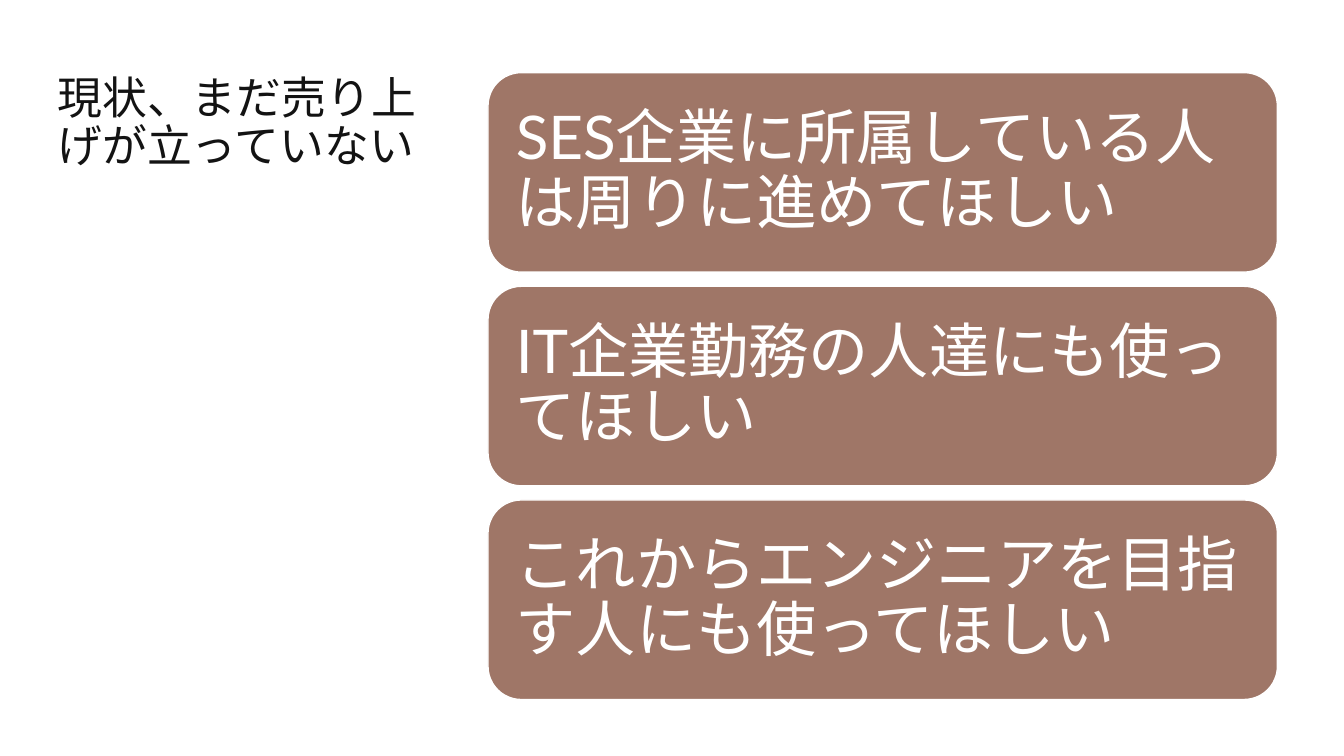
from pptx import Presentation
from pptx.dml.color import RGBColor
from pptx.enum.shapes import MSO_SHAPE
from pptx.enum.text import MSO_ANCHOR, MSO_AUTO_SIZE, PP_ALIGN
from pptx.util import Inches, Pt

ROUNDED = MSO_SHAPE.ROUNDED_RECTANGLE
TOP, MIDDLE = MSO_ANCHOR.TOP, MSO_ANCHOR.MIDDLE
NO_AUTOFIT = MSO_AUTO_SIZE.NONE
LEFT = PP_ALIGN.LEFT

SLIDE_WIDTH, SLIDE_HEIGHT = 13.33, 7.5
FONT = "Lato"
INK, BROWN, WHITE = "131313", "9F7667", "FFFFFF"
TITLE_ONLY = 5

TITLE_BOX = (0.47, 0.7, 3.82, 3.96)
CARDS_BOX = (4.84, 0.72, 7.83, 6.22)
CARD_GAP = 0.14

TITLE = "現状、まだ売り上げが立っていない"
REQUESTS = [
    "SES企業に所属している人は周りに進めてほしい",
    "IT企業勤務の人達にも使ってほしい",
    "これからエンジニアを目指す人にも使ってほしい",
]


def color(hex_string):
    return RGBColor.from_string(hex_string)


def write_text(shape, text, *, size, ink, anchor, inset=(0.1, 0.05), space_after=0):
    """Fill the shape with one paragraph; inset is (horizontal, vertical) in inches."""
    frame = shape.text_frame
    frame.word_wrap = True
    frame.auto_size = NO_AUTOFIT
    frame.vertical_anchor = anchor
    frame.margin_left = frame.margin_right = Inches(inset[0])
    frame.margin_top = frame.margin_bottom = Inches(inset[1])
    frame.text = text
    paragraph = frame.paragraphs[0]
    paragraph.alignment = LEFT
    paragraph.line_spacing = 0.9
    paragraph.space_before = Pt(0)
    paragraph.space_after = Pt(space_after)
    font = paragraph.runs[0].font
    font.name = FONT
    font.size = Pt(size)
    font.color.rgb = color(ink)


def add_title(slide, box):
    title = slide.shapes.title
    title.left, title.top, title.width, title.height = map(Inches, box)
    write_text(title, TITLE, size=32, ink=INK, anchor=TOP)


def add_cards(slide, box, texts):
    """Stack equal rounded cards that fill the box from top to bottom."""
    left, top, width, height = box
    card_height = (height - CARD_GAP * (len(texts) - 1)) / len(texts)
    for row, text in enumerate(texts):
        card_top = top + row * (card_height + CARD_GAP)
        card = slide.shapes.add_shape(
            ROUNDED, *map(Inches, (left, card_top, width, card_height)))
        card.shadow.inherit = False
        card.fill.solid()
        card.fill.fore_color.rgb = color(BROWN)
        card.line.color.rgb = color(WHITE)
        card.line.width = Pt(1)
        write_text(card, text, size=43, ink=WHITE, anchor=MIDDLE,
                   inset=(0.18, 0.18), space_after=15)


def main():
    presentation = Presentation()
    presentation.slide_width = Inches(SLIDE_WIDTH)
    presentation.slide_height = Inches(SLIDE_HEIGHT)
    slide = presentation.slides.add_slide(presentation.slide_layouts[TITLE_ONLY])
    add_title(slide, TITLE_BOX)
    add_cards(slide, CARDS_BOX, REQUESTS)
    presentation.save("out.pptx")


if __name__ == "__main__":
    main()
